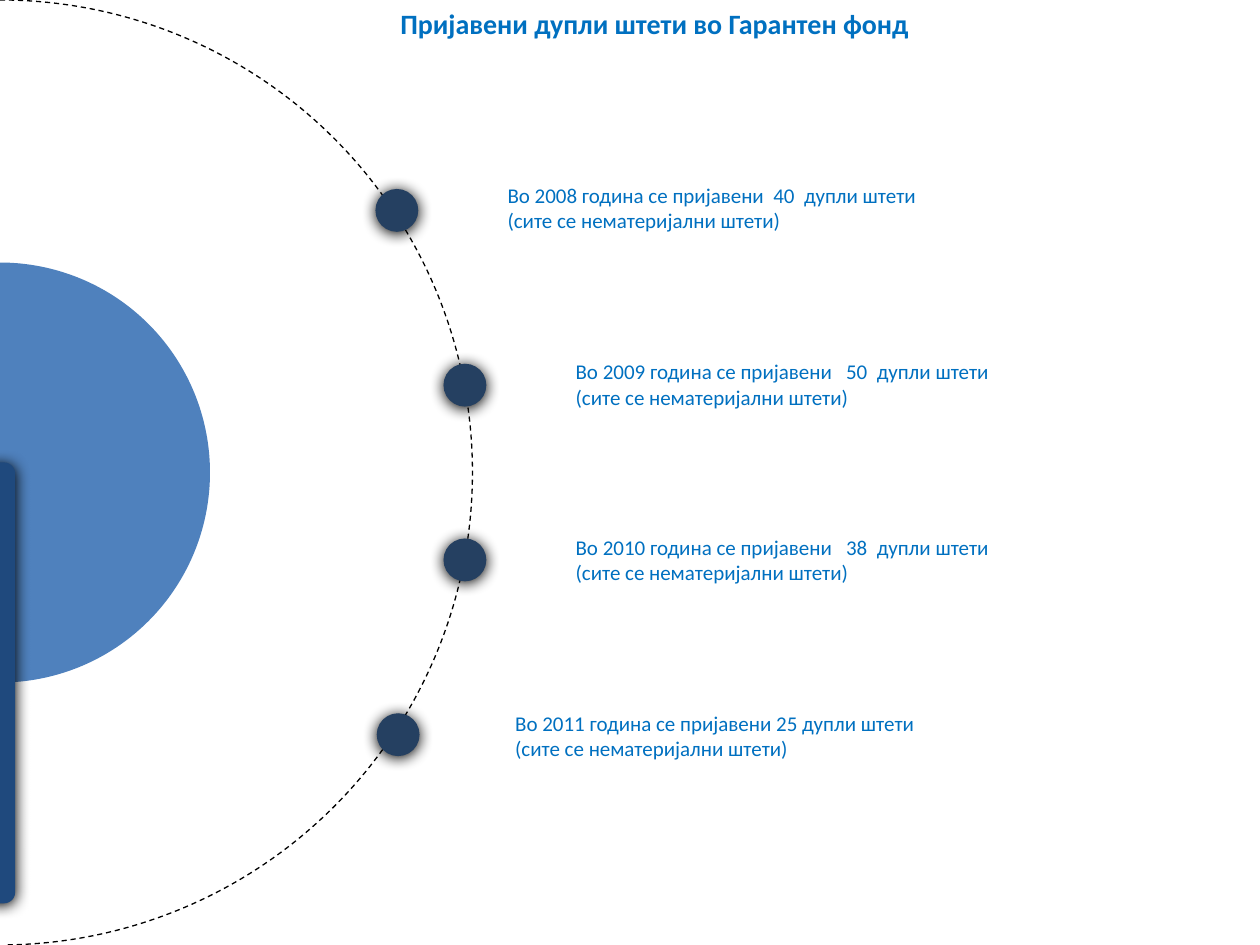
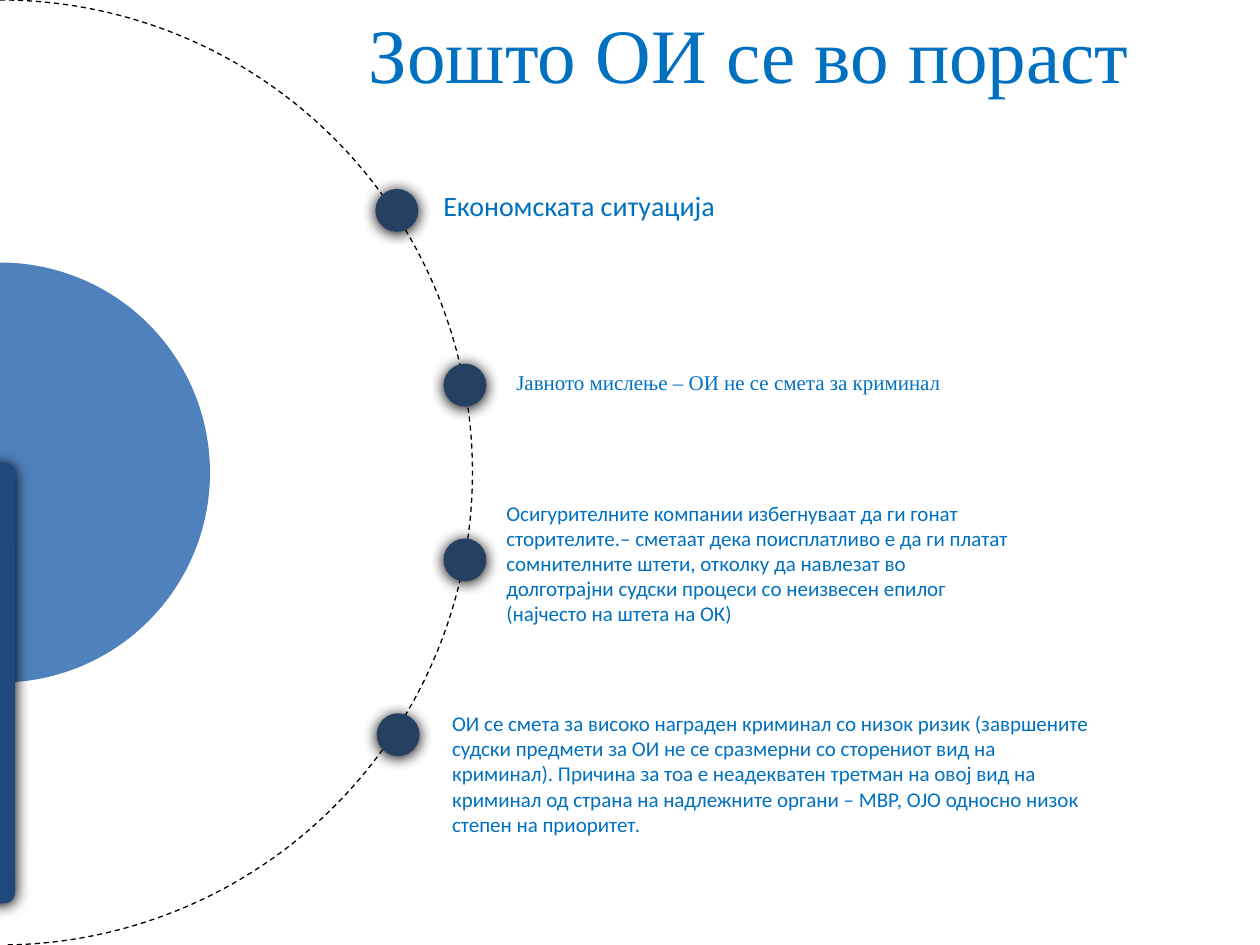
from dataclasses import dataclass

from lxml import etree
from pptx import Presentation
from pptx.dml.color import RGBColor
from pptx.enum.dml import MSO_LINE
from pptx.enum.shapes import MSO_SHAPE
from pptx.oxml.ns import qn
from pptx.util import Inches, Pt


@dataclass(frozen=True)
class Theme:
    text: RGBColor = RGBColor(0x00, 0x70, 0xC0)
    orbit: RGBColor = RGBColor(0xFF, 0xFF, 0xFF)
    orbit_line: RGBColor = RGBColor(0x00, 0x00, 0x00)
    dot: RGBColor = RGBColor(0x25, 0x40, 0x61)
    disc: RGBColor = RGBColor(0x4F, 0x81, 0xBD)
    bar: RGBColor = RGBColor(0x1F, 0x49, 0x7D)
    sans: str = "Calibri"
    serif: str = "Times New Roman"
    body_size: int = 12
    heading_size: int = 16
    display_size: int = 44


@dataclass(frozen=True)
class Label:
    text: str
    box: tuple  # left, top, width, height in inches
    font: str = Theme.sans
    size: int = Theme.body_size
    bold: bool = False
    level: int = 0
    line_spacing: float = 1.0


THEME = Theme()
ORBIT_BOX = (-3.75, 0, 7.5, 7.5)
DOT_SIZE = 0.34
DOT_LEFTS = (6.73, 7.27, 7.27, 6.74)  # from the left of the orbit box
DOT_TOP, DOT_STEP = 1.5, 1.387

TITLE_REPORTS = Label("Пријавени дупли штети во Гарантен фонд", (3.08, 0, 4.33, 0.37),
                      size=THEME.heading_size, bold=True)
REPORTS = [
    Label(text, box, level=1)
    for text, box in (
        ("Во 2008 година се пријавени  40  дупли штети\n(сите се нематеријални штети)",
         (3.43, 1.4, 4.2, 0.5)),
        ("Во 2009 година се пријавени   50  дупли штети (сите се нематеријални штети)",
         (3.97, 2.8, 4.2, 0.5)),
        ("Во 2010 година се пријавени   38  дупли штети (сите се нематеријални штети)",
         (3.97, 4.19, 4.2, 0.5)),
        ("Во 2011 година се пријавени 25 дупли штети (сите се нематеријални штети)",
         (3.49, 5.59, 3.92, 0.5)),
    )
]

TITLE_CAUSES = Label("Зошто ОИ се во пораст", (2.83, 0, 6.25, 0.84),
                     font=THEME.serif, size=THEME.display_size)
CAUSES = [
    Label("Економската ситуација", (3.42, 1.5, 4.2, 0.32),
          size=THEME.heading_size, line_spacing=0.8),
    Label("Јавното мислење – ОИ не се смета за криминал", (4, 2.92, 4.2, 0.26),
          font=THEME.serif, line_spacing=0.8),
    Label("Осигурителните компании избегнуваат да ги гонат сторителите.– сметаат дека "
          "поисплатливо е да ги платат сомнителните штети, отколку да навлезат во "
          "долготрајни судски процеси со неизвесен епилог (најчесто на штета на ОК)",
          (3.92, 3.92, 4.2, 1.11)),
    Label("ОИ се смета за високо награден криминал со низок ризик (завршените судски "
          "предмети за ОИ не се сразмерни со сторениот вид на криминал). Причина за тоа "
          "е неадекватен третман на овој вид на криминал од страна на надлежните органи "
          "– МВР, ОЈО односно низок степен на приоритет.",
          (3.49, 5.59, 5.34, 1.11)),
]


def add_filled_shape(slide, kind, box, color, adjustments=()):
    shape = slide.shapes.add_shape(kind, *map(Inches, box))
    shape.shadow.inherit = False
    shape.fill.solid()
    shape.fill.fore_color.rgb = color
    shape.line.fill.background()
    for index, value in enumerate(adjustments):
        shape.adjustments[index] = value
    return shape


def add_soft_shadow(shape):
    effects = shape._element.spPr.find(qn("a:effectLst"))
    shadow = etree.SubElement(effects, qn("a:outerShdw"), blurRad=str(Pt(8.5)),
                              dist=str(Pt(1)), dir="5400000", rotWithShape="0")
    etree.SubElement(shadow, qn("a:srgbClr"), val="000000")


def add_label(slide, label):
    text_frame = slide.shapes.add_textbox(*map(Inches, label.box)).text_frame
    text_frame.word_wrap = True
    text_frame.text = label.text
    for paragraph in text_frame.paragraphs:
        paragraph.level = label.level
        paragraph.line_spacing = label.line_spacing
        for run in paragraph.runs:
            run.font.name = label.font
            run.font.size = Pt(label.size)
            run.font.bold = label.bold
            run.font.color.rgb = THEME.text


def add_orbit(slide, box):
    """Dashed half circle running down the slide."""
    orbit = add_filled_shape(slide, MSO_SHAPE.ARC, box, THEME.orbit, (162, 53.71))
    orbit.line.color.rgb = THEME.orbit_line
    orbit.line.width = Pt(0.75)
    orbit.line.dash_style = MSO_LINE.DASH


def add_hub(slide, box):
    """Dots on the orbit, with the disc and the bar at its centre."""
    left, top, width, height = box
    for row, dot_left in enumerate(DOT_LEFTS):
        dot_box = (left + dot_left, top + DOT_TOP + row * DOT_STEP, DOT_SIZE, DOT_SIZE)
        add_soft_shadow(add_filled_shape(slide, MSO_SHAPE.OVAL, dot_box, THEME.dot))

    center_x, center_y = left + width / 2, top + height / 2
    disc_size = width * 4 / 9
    disc_box = (center_x - disc_size / 2, center_y - disc_size / 2, disc_size, disc_size)
    add_filled_shape(slide, MSO_SHAPE.ARC, disc_box, THEME.disc, (162, 53.6))

    bar_box = (center_x - 0.13, center_y - 0.08, 0.25, 3.5)
    bar = add_filled_shape(slide, MSO_SHAPE.ROUNDED_RECTANGLE, bar_box, THEME.bar, (0.35,))
    add_soft_shadow(bar)


def add_orbit_slide(presentation, title, labels):
    slide = presentation.slides.add_slide(presentation.slide_layouts[6])
    add_orbit(slide, ORBIT_BOX)
    for label in labels:
        add_label(slide, label)
    add_hub(slide, ORBIT_BOX)
    add_label(slide, title)


def main():
    presentation = Presentation()
    presentation.slide_width = Inches(10)
    presentation.slide_height = Inches(7.5)
    add_orbit_slide(presentation, TITLE_REPORTS, REPORTS)
    add_orbit_slide(presentation, TITLE_CAUSES, CAUSES)
    presentation.save("out.pptx")


if __name__ == "__main__":
    main()
